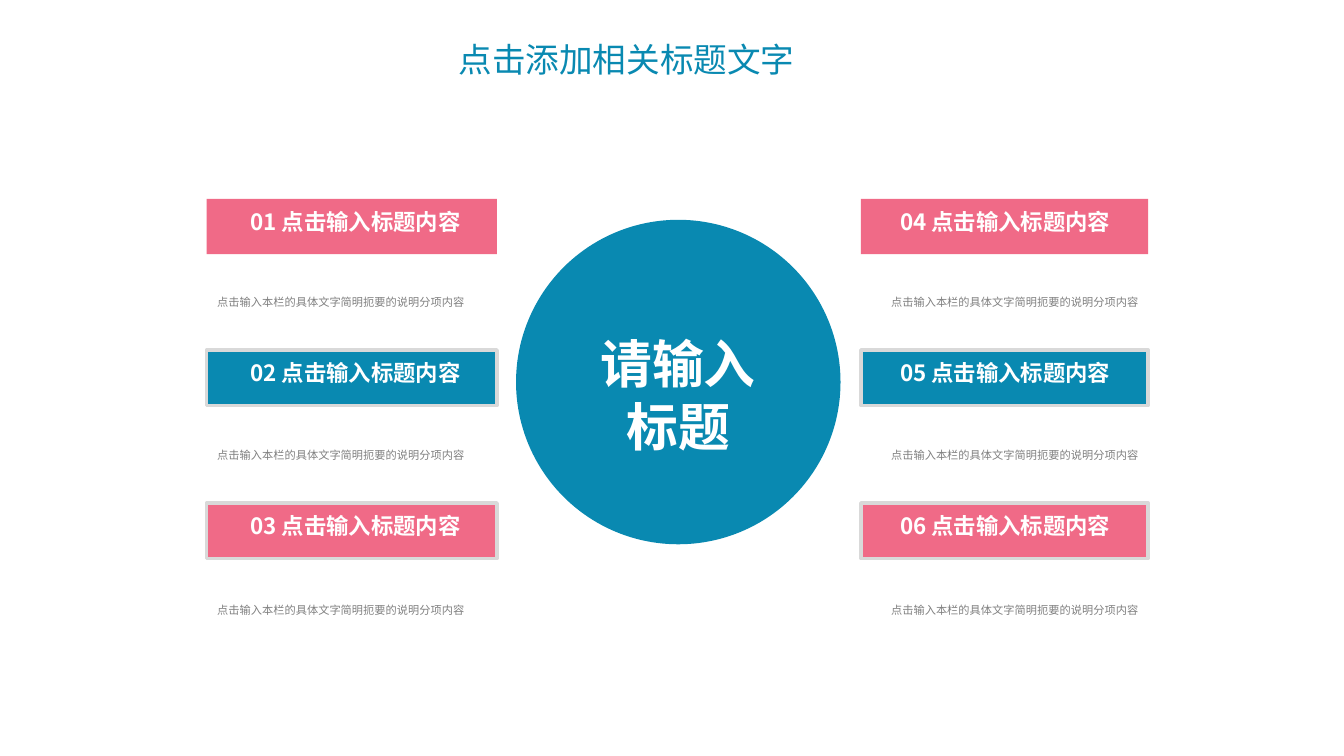
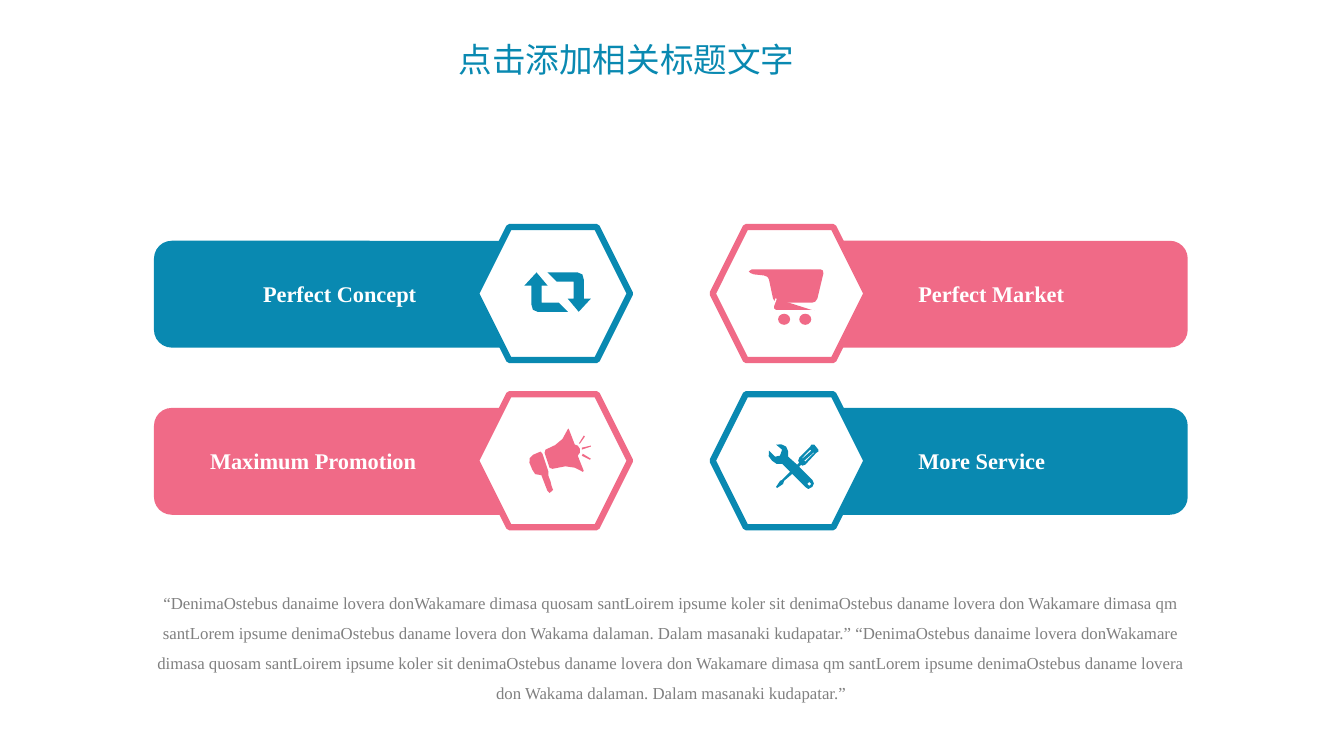
from lxml.etree import SubElement
from pptx import Presentation
from pptx.dml.color import RGBColor
from pptx.enum.shapes import MSO_SHAPE
from pptx.enum.text import MSO_ANCHOR, PP_ALIGN
from pptx.oxml.ns import qn
from pptx.util import Pt

BLUE, PINK, WHITE, GREY, FRAME = "0989B1", "F06A87", "FFFFFF", "808080", "D9D9D9"
CJK, SERIF = "Noto Sans CJK SC", "Times New Roman"
LEFT, CENTER, RIGHT = PP_ALIGN.LEFT, PP_ALIGN.CENTER, PP_ALIGN.RIGHT

ITEM_TITLE = "点击输入标题内容"
ITEM_NOTE = "点击输入本栏的具体文字简明扼要的说明分项内容"
QUOTE = (
    "DenimaOstebus danaime lovera donWakamare dimasa quosam santLoirem ipsume "
    "koler sit denimaOstebus daname lovera don Wakamare dimasa qm santLorem "
    "ipsume denimaOstebus daname lovera don Wakama dalaman. Dalam masanaki kudapatar."
)

ARROW = [
    (77, 51.1), (77, 37.4), (76, 33.8), (72.7, 32.4), (51.1, 32.4), (57.6, 38.9),
    (69.8, 38.9), (69.8, 51.1), (65.5, 51.1), (73.4, 60.5), (82.1, 51.1),
]
ARROWS = [ARROW, [(116.7 - x, 92.9 - y) for x, y in ARROW]]

BASKET = [
    (71.3, 54), (73.4, 53.3), (74.9, 51.1), (79.2, 33.1), (78.8, 31), (77, 30.2),
    (28.1, 30.2), (25.9, 31.7), (26.9, 32.8), (29.5, 33.8), (36.7, 34.6),
    (39.2, 35.6), (40.3, 37.4), (43.2, 51.1), (44.6, 53.3), (47.5, 54),
]
CART_BASE = [(45.4, 51.1), (43.2, 56.9), (43.6, 58.7), (45.4, 59.8), (72.7, 59.8)]

HANDLE = [
    (51.8, 58.3), (51.8, 55.4), (47.5, 42.5), (46.1, 41), (41, 43.2), (38.4, 45.7),
    (38.2, 49), (40.3, 54), (42.3, 57.1), (45.4, 57.6), (46.8, 57.9), (47.5, 59.8),
    (51.1, 69.1), (52.6, 70.6), (55.1, 68.4), (54, 65.5), (53.3, 62.4),
]
CONE = [
    (72.7, 43.9), (74.2, 41.8), (74.2, 38.9), (72.7, 36.7), (70.6, 36), (66.2, 24.5),
    (65.5, 25.2), (61.8, 32), (56.5, 36.4), (49.7, 39.6), (49, 41.8), (52.6, 52.6),
    (54.7, 53.3), (63.9, 51.5), (70.6, 52.5), (76.3, 55.4), (77, 54.7),
]
RAYS = [
    [(77.8, 30.2), (77, 29.5), (73.4, 35.3), (74.2, 35.3)],
    [(75.6, 43.9), (81.4, 46.8), (82.1, 46.1), (76.3, 42.5)],
    [(75.6, 39.6), (82.1, 37.4), (82.1, 36.7), (75.6, 38.2)],
]

TOOLS = [
    [
        (75.6, 39.6), (72.7, 36), (70.6, 36), (69.8, 37.4), (61.9, 45.4), (61.2, 47.5),
        (61.9, 49), (60.5, 50.4), (54, 44.6), (54, 40.8), (52.6, 37.4), (49.2, 35.8),
        (45.4, 36), (49.7, 39.6), (48.2, 43.9), (44.6, 44.6), (40.3, 40.3), (40.1, 44.3),
        (42.5, 47.5), (45.7, 49.7), (49.7, 49.7), (55.4, 55.4), (49.7, 61.2),
        (48.2, 61.9), (45.4, 66.2), (46.1, 67), (50.4, 64.1), (51.1, 61.9),
        (56.9, 56.9), (66.2, 66.2), (68.4, 67.7), (71.3, 66.2), (72.4, 63.7),
        (71.3, 61.2), (61.9, 51.8), (63.4, 50.4), (64.1, 51.1), (66.2, 50.4),
        (74.2, 41.8), (75.6, 41),
    ],
    [(69.1, 62.6), (70.6, 64.1), (69.1, 65.5), (67.7, 64.1)],
    [(64.1, 46.1), (64.1, 45.4), (69.8, 39.6), (70.6, 40.3)],
    [(66.2, 48.2), (65.5, 47.5), (72, 41.8), (72.7, 41.8)],
]


def rgb(value):
    return RGBColor.from_string(value)


def paint(sp, fill, line=None, width=0):
    sp.shadow.inherit = False
    sp.fill.solid()
    sp.fill.fore_color.rgb = rgb(fill)
    if line:
        sp.line.color.rgb = rgb(line)
        sp.line.width = Pt(width)
    else:
        sp.line.fill.background()


def shape(parent, kind, x, y, w, h, fill, line=None, width=0):
    sp = parent.shapes.add_shape(kind, Pt(x), Pt(y), Pt(w), Pt(h))
    paint(sp, fill, line, width)


def outline(parent, x, y, contours, fill, line=None, width=0, close=True):
    builder = None
    for contour in contours:
        pts = [(Pt(x + px), Pt(y + py)) for px, py in contour]
        if builder is None:
            builder = parent.shapes.build_freeform(*pts[0])
        else:
            builder.move_to(*pts[0])
        builder.add_line_segments(pts[1:], close=close)
    paint(builder.convert_to_shape(), fill, line, width)


def text(s, x, y, w, h, lines, size, color, font=CJK, bold=False, align=LEFT,
         insets=(0, 3.6), anchor=MSO_ANCHOR.TOP, spacing=None):
    tf = s.shapes.add_textbox(Pt(x), Pt(y), Pt(w), Pt(h)).text_frame
    tf.word_wrap = True
    tf.vertical_anchor = anchor
    tf.margin_left = tf.margin_right = Pt(insets[0])
    tf.margin_top = tf.margin_bottom = Pt(insets[1])
    for i, line in enumerate(lines):
        p = tf.paragraphs[0] if i == 0 else tf.add_paragraph()
        p.add_run().text = line
        p.alignment = align
        if spacing:
            p.line_spacing = spacing
        p.font.size = Pt(size)
        p.font.bold = bold
        p.font.color.rgb = rgb(color)
        p.font.name = font
        props = p._p.get_or_add_pPr().find(qn("a:defRPr"))
        SubElement(props, qn("a:ea")).set("typeface", font)


def new_slide(prs):
    s = prs.slides.add_slide(prs.slide_layouts[6])
    text(s, 321, 24.5, 257, 36, ["点击添加相关标题文字"], 24, BLUE, insets=(6.5, 3.6))
    return s


def item(s, x, y, w, number, color, frame, note_y, title_box, note_box, align):
    shape(s, MSO_SHAPE.RECTANGLE, x, y, w, 39.6, color, frame, 2.5)
    text(s, x + title_box[0], y + 3.3, title_box[1], 33, [f"{number:02d} {ITEM_TITLE}"],
         16, WHITE, bold=True, align=align)
    text(s, x + note_box[0], note_y, note_box[1], 14.4, [ITEM_NOTE], 8, GREY,
         align=align, anchor=MSO_ANCHOR.MIDDLE)


def hub(s, x, y, d):
    shape(s, MSO_SHAPE.OVAL, x, y, d, d, BLUE)
    text(s, x + 29, y + 75.5, 173.5, 98, ["请输入", "标题"], 37, WHITE, bold=True,
         align=CENTER, insets=(7.2, 3.6), spacing=Pt(45))


def hub_slide(prs):
    s = new_slide(prs)
    rows = [(142, 208.8, PINK, None), (250, 317.5, BLUE, FRAME), (359.3, 428.6, PINK, FRAME)]
    columns = [
        (147.6, 207.4, (-43.2, 224.6), (-19.4, 203.8), RIGHT),
        (615, 205.2, (28, 224.6), (21.5, 193), LEFT),
    ]
    for c, (x, w, title_box, note_box, align) in enumerate(columns):
        for r, (y, note_y, color, frame) in enumerate(rows):
            item(s, x, y, w, 3 * c + r + 1, color, frame, note_y, title_box, note_box, align)
    hub(s, 368.6, 157, 231.8)


def arrows_icon(g, x, y, color):
    outline(g, x, y, ARROWS, color)


def cart_icon(g, x, y, color):
    outline(g, x, y, [BASKET], color)
    for dx in (46.8, 61.9):
        shape(g, MSO_SHAPE.OVAL, x + dx, y + 61.9, 8.6, 7.9, color)
    outline(g, x, y, [CART_BASE], color, WHITE, 1, close=False)


def megaphone_icon(g, x, y, color):
    for part in [HANDLE, CONE, *RAYS]:
        outline(g, x, y, [part], color)


def tools_icon(g, x, y, color):
    outline(g, x, y, TOOLS, color)


def feature(s, x, y, label, color, icon, icon_right):
    panel_x, hex_x, label_x = (x, x + 230, x + 21) if icon_right else (x + 37, x, x + 147)
    shape(s, MSO_SHAPE.ROUNDED_RECTANGLE, panel_x, y + 9.8, 302.4, 76.3, color)
    g = s.shapes.add_group_shape()
    shape(g, MSO_SHAPE.HEXAGON, hex_x, y, 110, 95, WHITE, color, 4.5)
    icon(g, hex_x, y, color)
    text(s, label_x, y + 38, 166.3, 19.4, [label], 16, WHITE, SERIF, True,
         RIGHT if icon_right else LEFT, insets=(0, 0))


def feature_slide(prs):
    s = new_slide(prs)
    features = [
        ("Perfect Concept", BLUE, arrows_icon),
        ("Perfect Market", PINK, cart_icon),
        ("Maximum Promotion", PINK, megaphone_icon),
        ("More Service", BLUE, tools_icon),
    ]
    for i, (label, color, icon) in enumerate(features):
        row, col = divmod(i, 2)
        feature(s, 110 + 399 * col, 162.2 + 119.4 * row, label, color, icon, col == 0)
    text(s, 101.5, 411, 756, 97.2, [f"“{QUOTE}” “{QUOTE}”"], 12, GREY, SERIF,
         align=CENTER, insets=(9.4, 5), spacing=1.5)


def main():
    prs = Presentation()
    prs.slide_width, prs.slide_height = Pt(960), Pt(540)
    hub_slide(prs)
    feature_slide(prs)
    prs.save("out.pptx")


if __name__ == "__main__":
    main()
